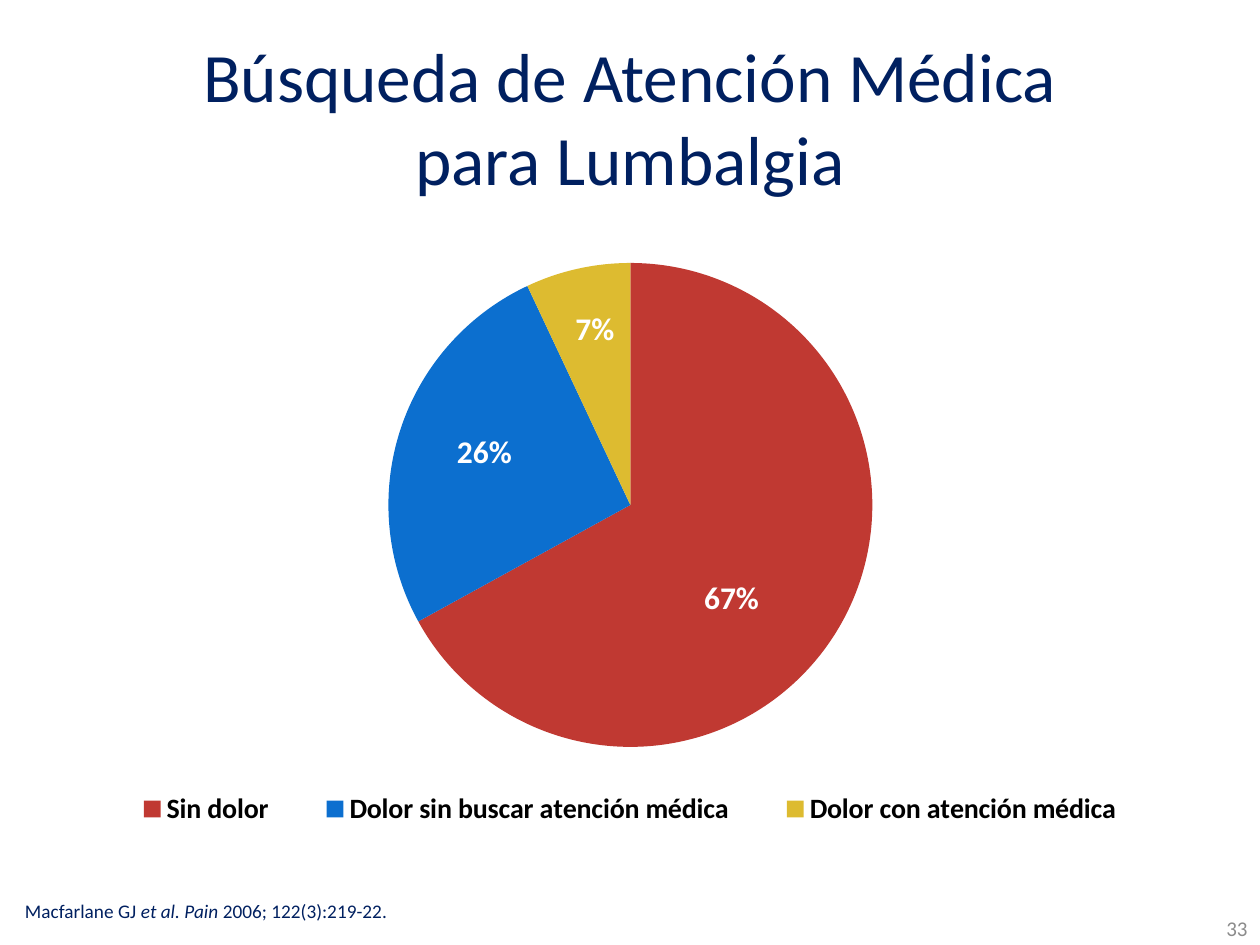
from copy import deepcopy
from lxml import etree
from pptx import Presentation
from pptx import util as u
from pptx.chart.data import CategoryChartData
from pptx.dml.color import RGBColor
from pptx.enum import chart as ch, text
from pptx.oxml.ns import qn

NAVY = RGBColor(0x00, 0x20, 0x60)
GRAY = RGBColor(0x8C, 0x8C, 0x8C)
BLACK = RGBColor(0x00, 0x00, 0x00)
WHITE = RGBColor(0xFF, 0xFF, 0xFF)
RED = RGBColor(0xC0, 0x39, 0x32)
BLUE = RGBColor(0x0C, 0x6F, 0xCF)
GOLD = RGBColor(0xDD, 0xBB, 0x30)

PX_PER_INCH = 126


def px(n):
    return u.Inches(n / PX_PER_INCH)


def place(parent, index, modes, values, size):
    for old in parent.findall(qn("c:layout")):
        parent.remove(old)
    layout = etree.Element(qn("c:layout"))
    parent.insert(index, layout)
    manual = etree.SubElement(layout, qn("c:manualLayout"))
    shares = [f"{v / total:.4f}" for v, total in zip(values, size * 2)]
    for tag, val in modes + list(zip("xywh", shares)):
        etree.SubElement(manual, qn("c:" + tag)).set("val", val)


class Deck:
    font = "Calibri"

    def __init__(self, width, height):
        self.prs = Presentation()
        self.prs.slide_width, self.prs.slide_height = px(width), px(height)
        self.s = self.prs.slides.add_slide(self.prs.slide_layouts[6])

    def style(self, font, size, color, bold=None):
        font.name, font.size, font.bold = self.font, u.Pt(size), bold
        font.color.rgb = color

    def text(self, box, parts, size, color, align, anchor, inset=True):
        sp = self.s.shapes.add_textbox(*map(px, box))
        tf = sp.text_frame
        tf.word_wrap = True
        tf.vertical_anchor = anchor
        if not inset:
            tf.margin_left = tf.margin_right = tf.margin_top = tf.margin_bottom = 0
        p = tf.paragraphs[0]
        p.text = parts[0]
        p.alignment = align
        for part in parts[1:]:
            p.add_run().text = part
        for i, r in enumerate(p.runs):
            self.style(r.font, size, color)
            if len(parts) > 1:
                r.font.italic = i % 2 == 1
        return sp

    def pie(self, box, shares, colors, plot, legend, shifts):
        size = box[2:]
        data = CategoryChartData()
        data.categories = list(shares)
        data.add_series("Series 1", list(shares.values()))
        chart = self.s.shapes.add_chart(
            ch.XL_CHART_TYPE.PIE, *map(px, box), data).chart
        self.style(chart.font, 16, BLACK)
        chart.has_title = False
        chart.has_legend = True
        chart.legend.position = ch.XL_LEGEND_POSITION.BOTTOM
        chart.legend.include_in_layout = False
        self.style(chart.legend.font, 16, BLACK, True)

        chart.plots[0].vary_by_categories = True
        series = chart.plots[0].series[0]
        series.format.line.color.rgb = WHITE
        series.format.line.width = u.Pt(0.75)
        labels = series.data_labels
        labels.show_value = True
        labels.show_percentage = False
        labels.number_format = '#,##0"%"'
        labels.number_format_is_linked = False
        labels.position = ch.XL_LABEL_POSITION.CENTER
        self.style(labels.font, 18, WHITE, True)

        root = chart.element
        for i, (color, shift) in enumerate(zip(colors, shifts)):
            point = series.points[i]
            point.format.fill.solid()
            point.format.fill.fore_color.rgb = color
            label = point.data_label
            self.style(label.font, 18, WHITE, True)
            label.position = ch.XL_LABEL_POSITION.CENTER
            node = root.findall(".//" + qn("c:dLbl"))[i]
            place(node, 1, [], shift, size)
            number_format = root.find(".//" + qn("c:dLbls") + "/" + qn("c:numFmt"))
            node.insert(2, deepcopy(number_format))

        edges = [("xMode", "edge"), ("yMode", "edge")]
        place(root.find(".//" + qn("c:plotArea")), 0,
              [("layoutTarget", "inner")] + edges, plot, size)
        place(root.find(".//" + qn("c:legend")), 1, edges, legend, size)


def main():
    align, anchor = text.PP_ALIGN, text.MSO_ANCHOR
    deck = Deck(1260, 945)
    deck.text((63, 38, 1134, 157), ["Búsqueda de Atención Médica\vpara Lumbalgia"],
              39.6, NAVY, align.CENTER, anchor.MIDDLE)
    deck.text((25, 898, 1194, 24),
              ["Macfarlane GJ ", "et al. Pain", " 2006; 122(3):219-22."],
              11, NAVY, align.LEFT, anchor.BOTTOM, inset=False)
    deck.pie((34, 202, 1191, 675),
             {"Sin dolor": 67,
              "Dolor sin buscar atención médica": 26,
              "Dolor con atención médica": 7},
             [RED, BLUE, GOLD],
             plot=(354, 61, 485, 484),
             legend=(61, 580, 1070, 54),
             shifts=[(-3, 32), (-31, -15), (-9, -58)])
    deck.text((998, 916, 262, 24), ["33"], 12, GRAY, align.RIGHT, anchor.MIDDLE)
    deck.prs.save("out.pptx")


if __name__ == "__main__":
    main()
